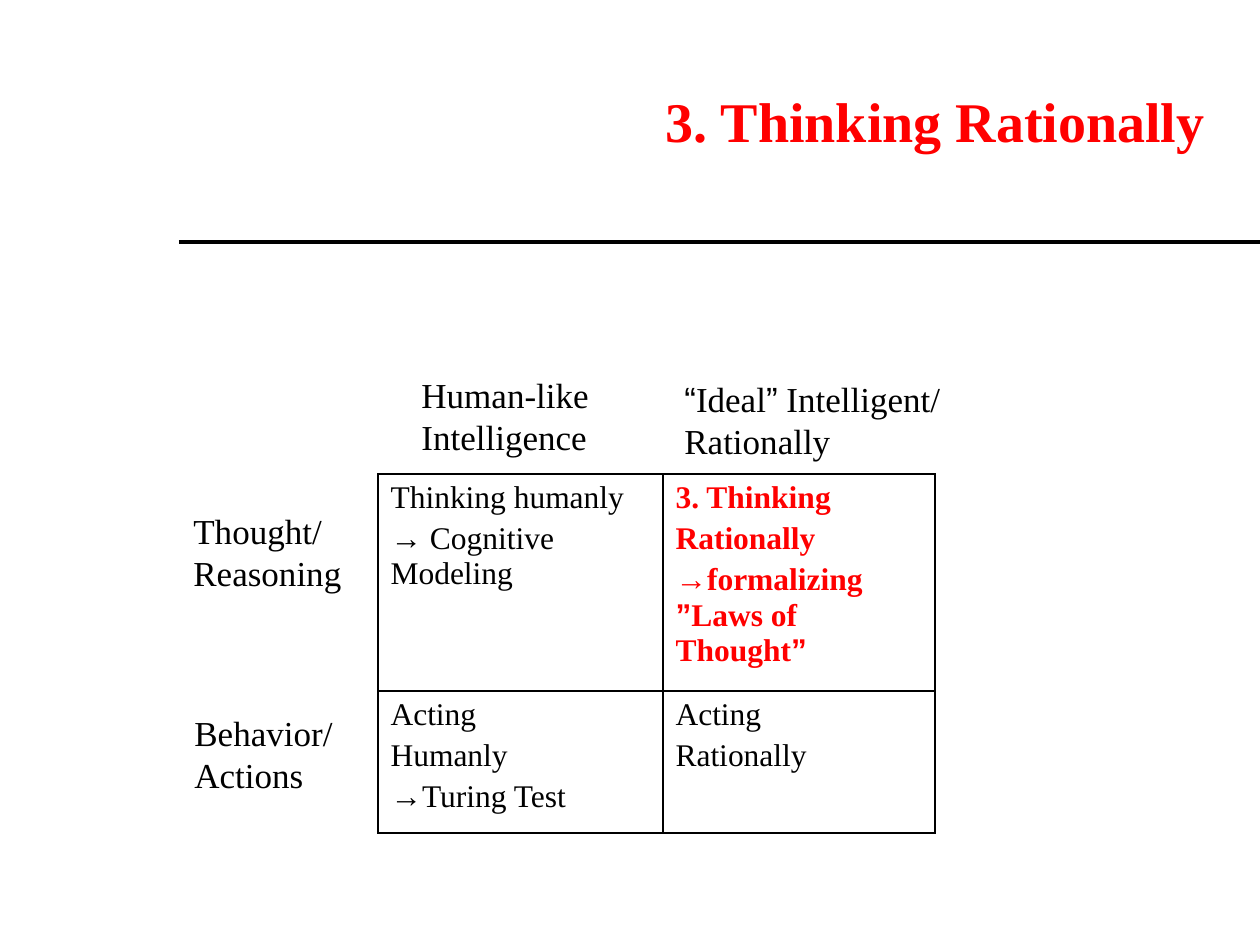
from dataclasses import dataclass
from itertools import groupby

from lxml.etree import SubElement
from pptx import Presentation
from pptx.dml.color import RGBColor
from pptx.enum.shapes import MSO_CONNECTOR
from pptx.enum.text import MSO_ANCHOR, MSO_AUTO_SIZE, PP_ALIGN
from pptx.oxml import parse_xml
from pptx.oxml.ns import nsdecls, qn
from pptx.util import Emu, Inches, Pt

PIXELS_PER_INCH = 126
COLORS = {"ink": "000000", "accent": "FF0000"}
SERIF, SANS = "Times New Roman", "Arial"
QUOTES = "“”"


@dataclass(frozen=True)
class Box:
    left: int
    top: int
    width: int
    height: int

    def lengths(self) -> list[Emu]:
        return [px(value) for value in (self.left, self.top, self.width, self.height)]


@dataclass(frozen=True)
class Style:
    size: int
    color: str = "ink"
    bold: bool = False
    space_before: float = 0
    alignment: PP_ALIGN = PP_ALIGN.LEFT


@dataclass(frozen=True)
class Label:
    box: Box
    lines: tuple[str, ...]


@dataclass(frozen=True)
class Entry:
    lines: tuple[str, ...]
    style: Style


TITLE = Style(32, "accent", True, alignment=PP_ALIGN.RIGHT)
LABEL = Style(20)
PLAIN = Style(18, space_before=3.6)
CURRENT = Style(18, "accent", True, 3.6)

TABLE_BOX = Box(378, 474, 557, 359)
COLUMN_WIDTHS = (285, 272)
ROW_HEIGHTS = (217, 142)
ENTRIES = (
    (
        Entry(("Thinking humanly", "→ Cognitive Modeling"), PLAIN),
        Entry(("3. Thinking", "Rationally", "→formalizing ”Laws of Thought”"), CURRENT),
    ),
    (
        Entry(("Acting", "Humanly", "→Turing Test"), PLAIN),
        Entry(("Acting", "Rationally"), PLAIN),
    ),
)
LABELS = (
    Label(Box(181, 503, 175, 97), ("Thought/", "Reasoning")),
    Label(Box(182, 705, 165, 97), ("Behavior/", "Actions")),
    Label(Box(409, 367, 193, 97), ("Human-like", "Intelligence")),
    Label(Box(672, 371, 287, 97), ("“Ideal” Intelligent/", "Rationally")),
)


def px(value: int) -> Emu:
    return Emu(round(value * Inches(1) / PIXELS_PER_INCH))


def set_values(target, values: dict) -> None:
    for name, value in values.items():
        setattr(target, name, value)


def write_lines(frame, lines: tuple[str, ...], style: Style) -> None:
    for index, line in enumerate(lines):
        para = frame.paragraphs[0] if index == 0 else frame.add_paragraph()
        set_values(para, {"alignment": style.alignment, "space_before": Pt(style.space_before)})
        for quoted, letters in groupby(line, lambda letter: letter in QUOTES):
            span = para.add_run()
            span.text = "".join(letters)
            set_values(span.font, {
                "name": SANS if quoted else SERIF,
                "size": Pt(style.size),
                "bold": style.bold,
            })
            span.font.color.rgb = RGBColor.from_string(COLORS[style.color])


def draw_title(page) -> None:
    title = page.shapes.title
    box = Box(147, 42, 1071, 157)
    set_values(title, dict(zip(("left", "top", "width", "height"), box.lengths())))
    set_values(title.text_frame, {
        "vertical_anchor": MSO_ANCHOR.MIDDLE,
        "auto_size": MSO_AUTO_SIZE.NONE,
        "word_wrap": True,
    })
    write_lines(title.text_frame, ("3. Thinking Rationally",), TITLE)


def draw_rule(page) -> None:
    rule = page.shapes.add_connector(
        MSO_CONNECTOR.STRAIGHT, px(179), px(242), px(1260), px(242)
    )
    rule.line.color.rgb = RGBColor.from_string(COLORS["ink"])
    rule.line.width = Pt(2.25)
    SubElement(rule.element.spPr, qn("a:effectLst"))


def draw_label(page, label: Label) -> None:
    frame = page.shapes.add_textbox(*label.box.lengths()).text_frame
    set_values(frame, {"word_wrap": False, "auto_size": MSO_AUTO_SIZE.SHAPE_TO_FIT_TEXT})
    write_lines(frame, label.lines, LABEL)


def add_borders(cell) -> None:
    properties = cell._tc.get_or_add_tcPr()
    for index, side in enumerate("LRTB"):
        properties.insert(index, parse_xml(
            f'<a:ln{side} {nsdecls("a")} w="{Pt(1)}"><a:solidFill>'
            f'<a:srgbClr val="{COLORS["ink"]}"/></a:solidFill></a:ln{side}>'
        ))


def draw_table(page) -> None:
    table = page.shapes.add_table(
        len(ROW_HEIGHTS), len(COLUMN_WIDTHS), *TABLE_BOX.lengths()
    ).table
    set_values(table, {"first_row": False, "horz_banding": False})
    for column, width in zip(table.columns, COLUMN_WIDTHS):
        column.width = px(width)
    for row, height, entries in zip(table.rows, ROW_HEIGHTS, ENTRIES):
        row.height = px(height)
        for cell, entry in zip(row.cells, entries):
            cell.fill.background()
            add_borders(cell)
            write_lines(cell.text_frame, entry.lines, entry.style)


def main() -> None:
    deck = Presentation()
    set_values(deck, {"slide_width": px(1260), "slide_height": px(945)})
    page = deck.slides.add_slide(deck.slide_layouts[5])
    draw_rule(page)
    draw_title(page)
    draw_table(page)
    for label in LABELS:
        draw_label(page, label)
    deck.save("out.pptx")


if __name__ == "__main__":
    main()
